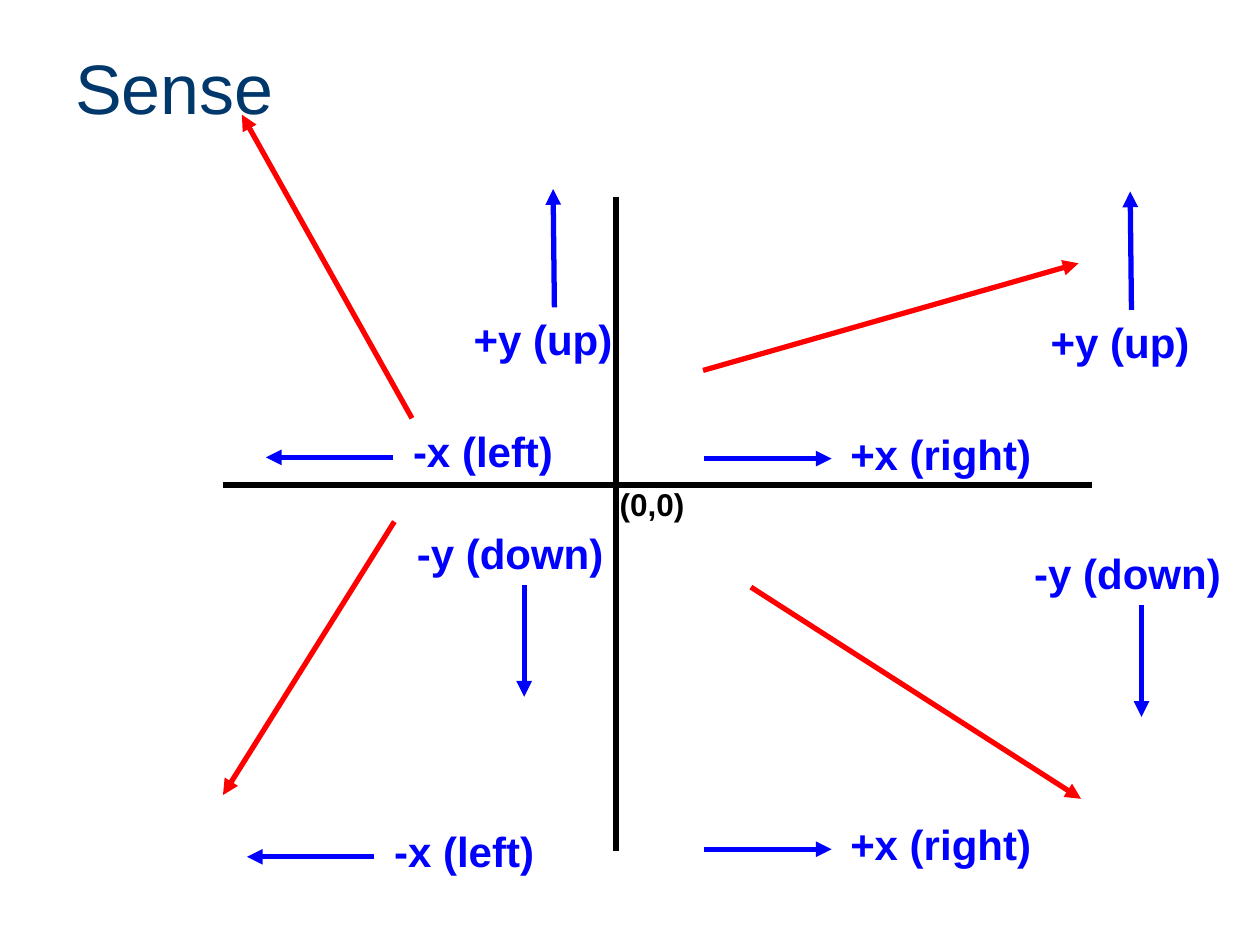
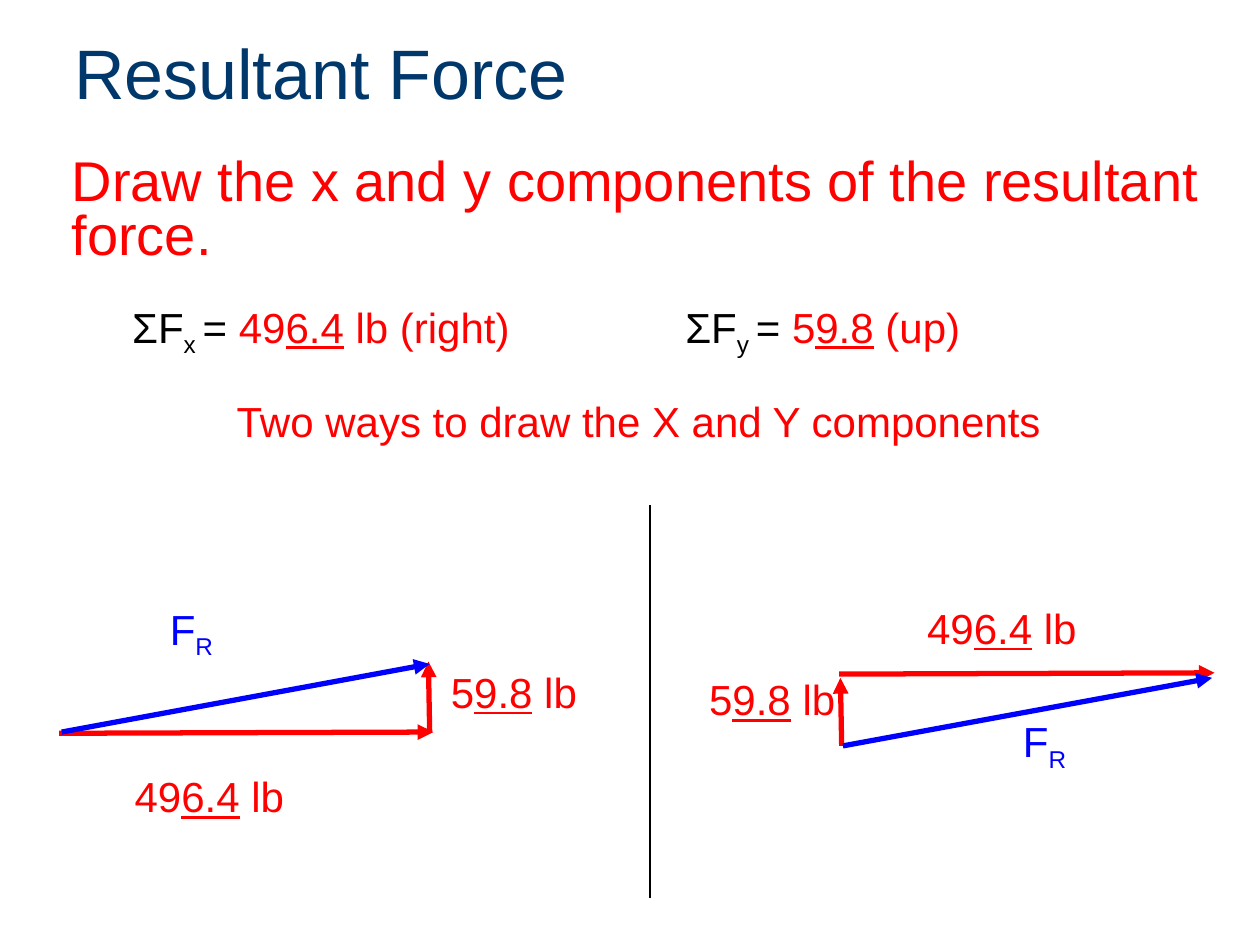
from dataclasses import dataclass
from typing import NamedTuple

from lxml.etree import SubElement
from pptx import Presentation
from pptx.dml.color import RGBColor
from pptx.enum.shapes import MSO_CONNECTOR as Connector
from pptx.enum.text import MSO_ANCHOR as Anchor
from pptx.oxml.ns import qn
from pptx.presentation import Presentation as Deck
from pptx.slide import Slide
from pptx.util import Inches, Pt


@dataclass(frozen=True)
class Theme:
    font: str = "Arial"
    navy: str = "00386B"
    red: str = "FF0000"
    blue: str = "0000FF"
    black: str = "000000"
    title_size: float = 40
    body_size: float = 32
    label_size: float = 24
    origin_size: float = 18
    heavy: float = 3
    thin: float = 0.75


THEME = Theme()


class Point(NamedTuple):
    x: float
    y: float

    def shifted(self, dx: float, dy: float) -> "Point":
        return Point(self.x + dx, self.y + dy)


class Span(NamedTuple):
    text: str
    color: str = THEME.red
    underline: bool = False
    subscript: bool = False


class Label(NamedTuple):
    at: Point
    width: float
    spans: list[Span]
    size: float = THEME.label_size
    bold: bool = False
    height: float = 0.5


class Line(NamedTuple):
    start: Point
    end: Point
    color: str = THEME.black
    width: float = THEME.heavy
    arrow: bool = False


class Direction(NamedTuple):
    name: str
    reach: Point
    label_offset: Point
    label_width: float
    starts: list[Point]


DIRECTIONS = [
    Direction("+x (right)", Point(1.01, 0), Point(1.06, -0.29), 1.83,
              [Point(5.59, 3.64), Point(5.59, 6.74)]),
    Direction("-x (left)", Point(-1.01, 0), Point(0.06, -0.3), 1.83,
              [Point(3.12, 3.63), Point(2.97, 6.8)]),
    Direction("+y (up)", Point(-0.01, -0.94), Point(-0.74, 0), 1.41,
              [Point(4.4, 2.44), Point(8.98, 2.46)]),
    Direction("-y (down)", Point(0, 0.89), Point(-0.95, -0.5), 1.72,
              [Point(4.16, 4.64), Point(9.06, 4.8)]),
]

VECTORS = [
    (Point(5.58, 2.94), Point(8.56, 2.09)),
    (Point(3.13, 4.14), Point(1.77, 6.31)),
    (Point(5.96, 4.66), Point(8.58, 6.34)),
    (Point(3.27, 3.32), Point(1.92, 0.91)),
]

X_VALUE = [Span("49"), Span("6.4", underline=True)]
Y_VALUE = [Span("5"), Span("9.8", underline=True)]
UNIT = Span(" lb")
RESULTANT = [Span("F", THEME.blue), Span("R", THEME.blue, subscript=True)]


class Triangle(NamedTuple):
    x_side: tuple[Point, Point]
    y_side: tuple[Point, Point]
    resultant: tuple[Point, Point]
    x_label: Point
    y_label: Point
    resultant_label: Point


TRIANGLES = [
    Triangle((Point(0.47, 5.82), Point(3.44, 5.81)),
             (Point(3.41, 5.8), Point(3.4, 5.25)),
             (Point(0.49, 5.81), Point(3.41, 5.27)),
             Point(0.97, 6.07), Point(3.48, 5.24), Point(1.25, 4.74)),
    Triangle((Point(6.66, 5.35), Point(9.64, 5.34)),
             (Point(6.68, 5.92), Point(6.67, 5.38)),
             (Point(6.69, 5.92), Point(9.62, 5.38)),
             Point(7.26, 4.73), Point(5.53, 5.3), Point(8.02, 5.63)),
]


def draw_label(page: Slide, label: Label, anchor: Anchor = Anchor.TOP,
               line_spacing: float = 1.0) -> None:
    box = page.shapes.add_textbox(Inches(label.at.x), Inches(label.at.y),
                                  Inches(label.width), Inches(label.height))
    frame = box.text_frame
    frame.word_wrap = True
    frame.vertical_anchor = anchor
    para = frame.paragraphs[0]
    para.line_spacing = line_spacing
    for span in label.spans:
        run = para.add_run()
        run.text = span.text
        run.font.name = THEME.font
        run.font.size = Pt(label.size)
        run.font.bold = label.bold
        run.font.underline = span.underline
        run.font.color.rgb = RGBColor.from_string(span.color)
        if span.subscript:
            run._r.get_or_add_rPr().set("baseline", "-25000")


def draw_line(page: Slide, line: Line) -> None:
    connector = page.shapes.add_connector(
        Connector.STRAIGHT, Inches(line.start.x), Inches(line.start.y),
        Inches(line.end.x), Inches(line.end.y))
    connector.line.color.rgb = RGBColor.from_string(line.color)
    connector.line.width = Pt(line.width)
    if line.arrow:
        SubElement(connector.line._get_or_add_ln(), qn("a:tailEnd"), type="triangle")
    SubElement(connector._element.spPr, qn("a:effectLst"))


def draw_arrow(page: Slide, start: Point, end: Point, color: str) -> None:
    draw_line(page, Line(start, end, color, arrow=True))


def add_page(deck: Deck, title: str, title_at: Point) -> Slide:
    page = deck.slides.add_slide(deck.slide_layouts[6])
    draw_label(page, Label(title_at, 9, [Span(title, THEME.navy)],
                           THEME.title_size, height=0.78), Anchor.MIDDLE)
    return page


def draw_direction(page: Slide, direction: Direction) -> None:
    for start in direction.starts:
        draw_label(page, Label(start.shifted(*direction.label_offset),
                               direction.label_width,
                               [Span(direction.name, THEME.blue)], bold=True))
        draw_arrow(page, start, start.shifted(*direction.reach), THEME.blue)


def draw_triangle(page: Slide, triangle: Triangle) -> None:
    draw_label(page, Label(triangle.x_label, 1.5, [*X_VALUE, UNIT]))
    draw_label(page, Label(triangle.y_label, 1.3, [*Y_VALUE, UNIT]))
    draw_label(page, Label(triangle.resultant_label, 0.7, RESULTANT))
    draw_arrow(page, *triangle.x_side, THEME.red)
    draw_arrow(page, *triangle.y_side, THEME.red)
    draw_arrow(page, *triangle.resultant, THEME.blue)


def sum_spans(axis: str, value: list[Span], ending: str) -> list[Span]:
    return [Span("ΣF", THEME.black), Span(f"{axis} ", THEME.black, subscript=True),
            Span("= ", THEME.black), *value, Span(ending)]


def build_sense(deck: Deck) -> None:
    page = add_page(deck, "Sense", Point(0.5, 0.3))
    draw_line(page, Line(Point(1.77, 3.85), Point(8.67, 3.85)))
    draw_line(page, Line(Point(4.89, 1.56), Point(4.89, 6.75)))
    for start, end in VECTORS:
        draw_arrow(page, start, end, THEME.red)
    for direction in DIRECTIONS:
        draw_direction(page, direction)
    draw_label(page, Label(Point(4.82, 3.8), 0.88, [Span("(0,0)", THEME.black)],
                           THEME.origin_size, True, 0.4))


def build_resultant(deck: Deck) -> None:
    page = add_page(deck, "Resultant Force", Point(0.49, 0.18))
    task = [Span("Draw the x and y components of the resultant force.")]
    draw_label(page, Label(Point(0.47, 1.21), 9.43, task, THEME.body_size,
                           height=0.78), line_spacing=0.8)
    draw_label(page, Label(Point(0.95, 2.34), 4, sum_spans("x", X_VALUE, " lb (right)")))
    draw_label(page, Label(Point(5.34, 2.34), 3.11, sum_spans("y", Y_VALUE, " (up)")))
    draw_label(page, Label(Point(1.78, 3.09), 6.8,
                           [Span("Two ways to draw the X and Y components")]))
    draw_line(page, Line(Point(5.16, 4.01), Point(5.16, 7.13), width=THEME.thin))
    for triangle in TRIANGLES:
        draw_triangle(page, triangle)


def main() -> None:
    deck = Presentation()
    deck.slide_width = Inches(10)
    deck.slide_height = Inches(7.5)
    build_sense(deck)
    build_resultant(deck)
    deck.save("out.pptx")


if __name__ == "__main__":
    main()
